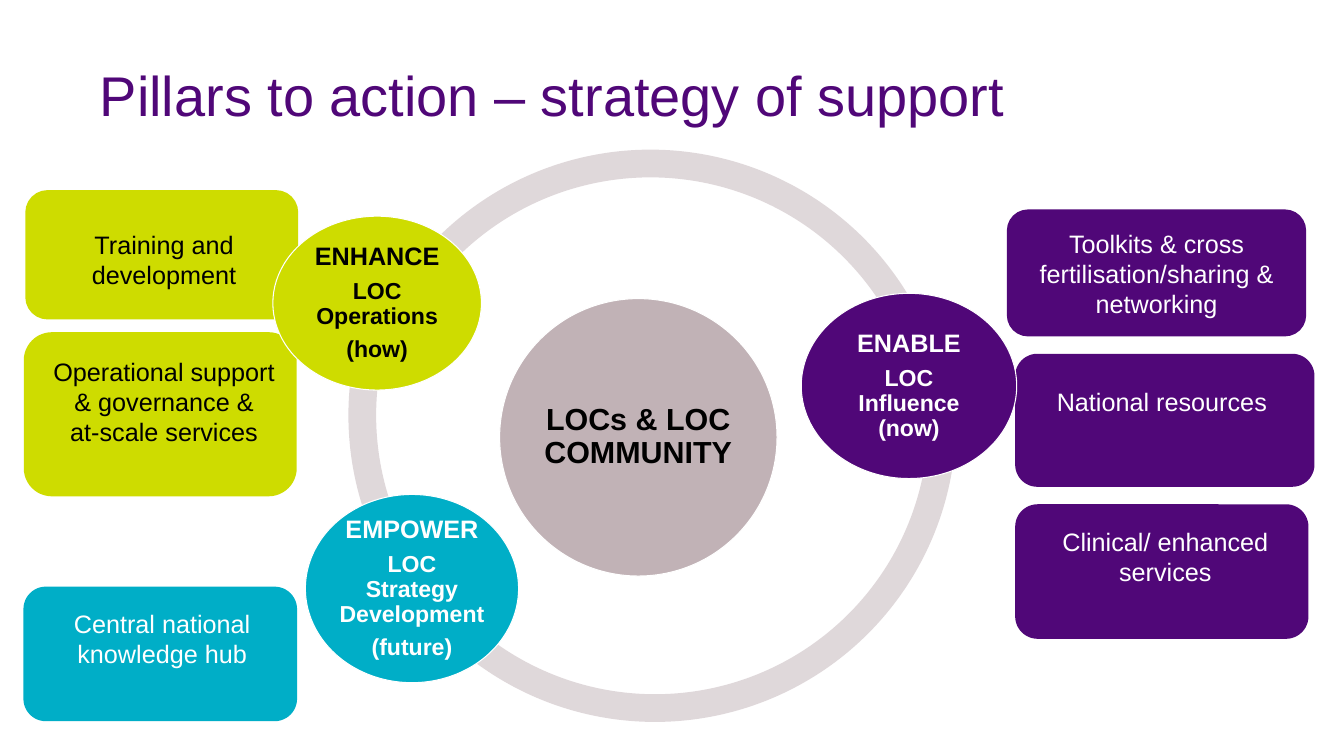
import pptx
import pptx.util
import pptx.dml.color
import pptx.enum.shapes
import pptx.enum.text
import pptx.oxml.ns
from lxml import etree
from pptx.util import Inches

FONT = "Arial"
PURPLE, LIME, TEAL, MAUVE = "500778", "CEDC00", "00AEC7", "C1B2B6"
BLACK, WHITE = "000000", "FFFFFF"
SHAPES = pptx.enum.shapes.MSO_SHAPE
ANCHOR = pptx.enum.text.MSO_ANCHOR
CENTER = pptx.enum.text.PP_ALIGN.CENTER

# Card box, fill, text colour, text box (offset from the card, then size), lines
CARDS = [
    ((0.33, 4.41, 3.58, 2.14), LIME, BLACK, (0.17, 0.25, 3.34, 1.75),
     ["Operational support & governance &", "at-scale services"]),
    ((0.35, 2.53, 3.58, 1.68), LIME, BLACK, (0.17, 0.45, 3.3, 0.95),
     ["Training and development"]),
    ((0.31, 7.76, 3.62, 1.78), TEAL, WHITE, (0.35, 0.24, 2.97, 1.36),
     ["Central national knowledge hub"]),
    ((13.32, 2.77, 3.96, 1.68), PURPLE, WHITE, (0.04, 0.2, 3.88, 1.31),
     ["Toolkits & cross fertilisation/sharing & networking"]),
    ((13.43, 4.68, 3.96, 1.76), PURPLE, WHITE, (0.24, 0.38, 3.4, 0.91),
     ["National resources"]),
    ((13.43, 6.67, 3.88, 1.78), PURPLE, WHITE, (0.41, 0.24, 3.15, 1.31),
     ["Clinical/ enhanced services"]),
]

# Offset of each arc within the ring, start and end angle in degrees
ARCS = [
    ((0, 0), 143.9, 202.4),
    ((0.07, 0.07), 1.94, 133.64),
    ((0.01, 0.47), 212.78, 344.87),
]
ARC_SIZE = 7.97
ARC_THICKNESS = 0.046

# Offset within the ring and size, fill, text colour, lines with sizes
CIRCLES = [
    ((2, 2.44, 3.67, 3.67), MAUVE, BLACK, [("LOCs & LOC COMMUNITY", 29)]),
    ((-1, 1.35, 2.76, 2.3), LIME, BLACK,
     [("ENHANCE", 24), ("LOC Operations", 22), ("(how)", 22)]),
    ((5.99, 2.37, 2.85, 2.45), PURPLE, WHITE,
     [("ENABLE", 24), ("LOC Influence (now)", 22)]),
    ((-0.57, 5.03, 2.82, 2.49), TEAL, WHITE,
     [("EMPOWER", 24), ("LOC Strategy Development", 22), ("(future)", 22)]),
]


def color(hex_value):
    return pptx.dml.color.RGBColor.from_string(hex_value)


def add_filled_shape(slide, kind, box, fill, line=None, line_width=1):
    shape = slide.shapes.add_shape(kind, *map(Inches, box))
    shape.shadow.inherit = False
    shape.fill.solid()
    shape.fill.fore_color.rgb = color(fill)
    if line:
        shape.line.color.rgb = color(line)
        shape.line.width = pptx.util.Pt(line_width)
    else:
        shape.line.fill.background()
    return shape


def write_lines(frame, lines, text_color, bold=False):
    """Write (text, size) pairs as centred paragraphs and return them."""
    frame.word_wrap = True
    for index, (text, size) in enumerate(lines):
        paragraph = frame.paragraphs[0] if index == 0 else frame.add_paragraph()
        paragraph.text = text
        paragraph.alignment = CENTER
        paragraph.font.name = FONT
        paragraph.font.size = pptx.util.Pt(size)
        paragraph.font.bold = bold
        paragraph.font.color.rgb = color(text_color)
    return frame.paragraphs


def add_title(slide, box, text):
    title = slide.shapes.title
    title.left, title.top, title.width, title.height = map(Inches, box)
    frame = title.text_frame
    frame.word_wrap = True
    frame.vertical_anchor = ANCHOR.MIDDLE
    paragraph = frame.paragraphs[0]
    paragraph.text = text
    paragraph.alignment = pptx.enum.text.PP_ALIGN.LEFT
    paragraph.line_spacing = 0.9
    paragraph.font.name = FONT
    paragraph.font.size = pptx.util.Pt(53.3)
    paragraph.font.color.rgb = color(PURPLE)


def add_card(slide, box, fill, text_color, text_box, lines):
    outline = LIME if fill == LIME else None
    add_filled_shape(slide, SHAPES.ROUNDED_RECTANGLE, box, fill, outline, 2.25)
    left, top, width, height = text_box
    label = slide.shapes.add_textbox(Inches(box[0] + left), Inches(box[1] + top),
                                     Inches(width), Inches(height))
    write_lines(label.text_frame, [(line, 24) for line in lines], text_color)


def add_arc(slide, left, top, start, end):
    arc = add_filled_shape(slide, SHAPES.BLOCK_ARC,
                           (left, top, ARC_SIZE, ARC_SIZE), MAUVE)
    # Angles are stored as 60000ths of a degree, adjustments as 100000ths
    arc.adjustments[0] = start * 0.6
    arc.adjustments[1] = end * 0.6
    arc.adjustments[2] = ARC_THICKNESS
    fill_color = arc.fill._xPr.find(".//" + pptx.oxml.ns.qn("a:srgbClr"))
    etree.SubElement(fill_color, pptx.oxml.ns.qn("a:alpha"), val="50000")


def add_circle(slide, box, fill, text_color, lines):
    circle = add_filled_shape(slide, SHAPES.OVAL, box, fill, WHITE)
    frame = circle.text_frame
    frame.vertical_anchor = ANCHOR.MIDDLE
    frame.margin_left = frame.margin_right = Inches(0.03)
    frame.margin_top = frame.margin_bottom = Inches(0.03)
    paragraphs = write_lines(frame, lines, text_color, bold=True)
    for paragraph, (_, size) in zip(paragraphs, lines):
        paragraph.line_spacing = 0.9
        paragraph.space_after = pptx.util.Pt(round(size * 0.35))


def add_ring(slide, left, top):
    for (dx, dy), start, end in ARCS:
        add_arc(slide, left + dx, top + dy, start, end)
    for (dx, dy, width, height), fill, text_color, lines in CIRCLES:
        add_circle(slide, (left + dx, top + dy, width, height),
                   fill, text_color, lines)


def main():
    presentation = pptx.Presentation()
    presentation.slide_width = Inches(17.78)
    presentation.slide_height = Inches(10)
    slide = presentation.slides.add_slide(presentation.slide_layouts[5])

    # Title
    add_title(slide, (1.22, 0.39, 14.33, 1.81),
              "Pillars to action – strategy of support")
    # Support activities on both sides
    for card in CARDS:
        add_card(slide, *card)
    # Ring of pillars around the community
    add_ring(slide, 4.61, 1.51)

    presentation.save("out.pptx")


if __name__ == "__main__":
    main()
